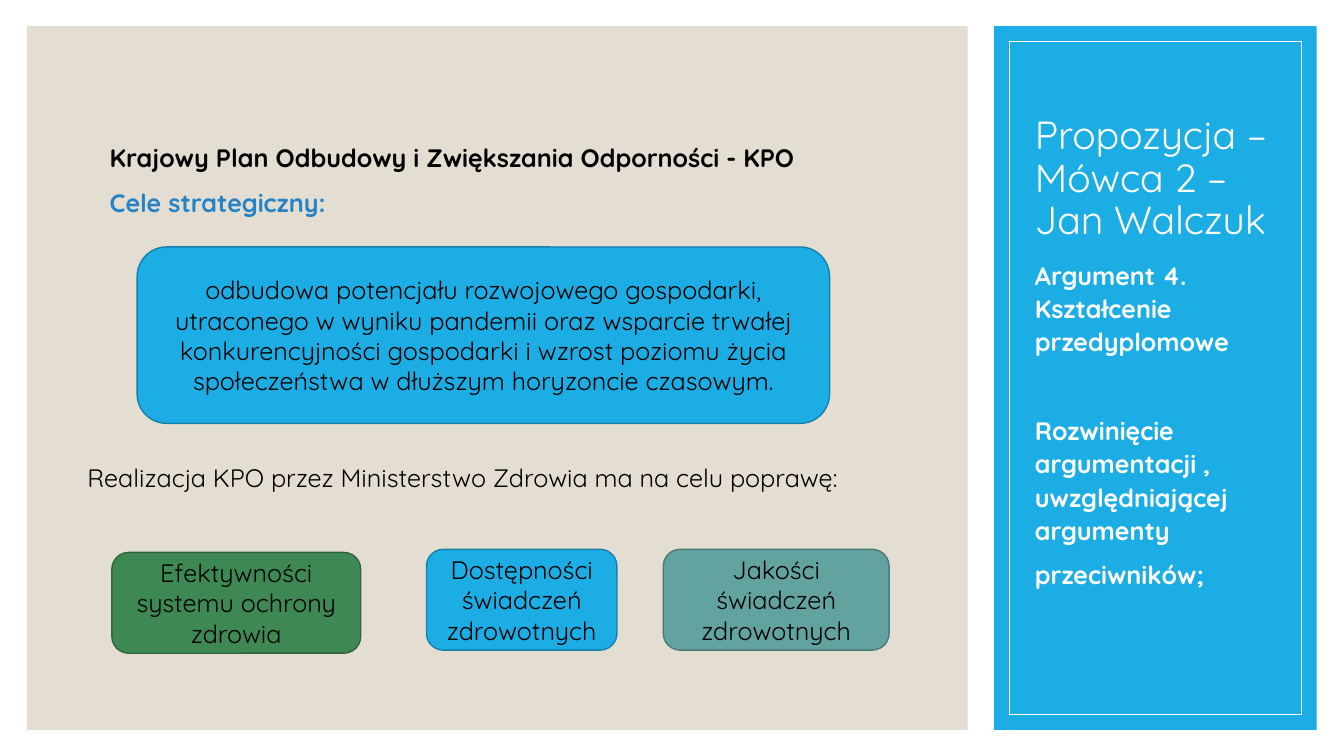
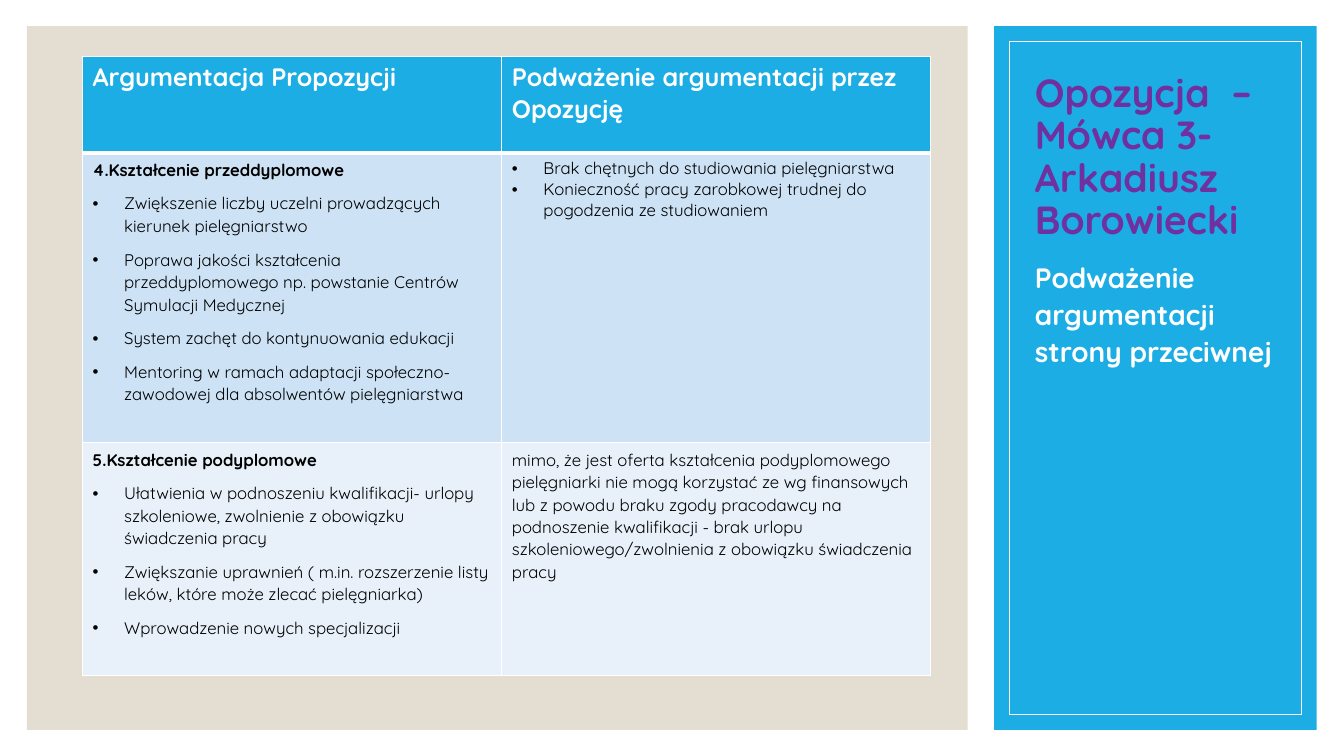
"""Builds two debate slides with a shared beige panel and blue sidebar."""
from lxml.etree import SubElement
from pptx import Presentation
from pptx.dml.color import RGBColor
from pptx.enum.shapes import MSO_SHAPE as Shape
from pptx.enum.text import MSO_ANCHOR as Anchor, PP_ALIGN as Align
from pptx.oxml.ns import qn
from pptx.util import Pt

FONT = "Quicksand"
WHITE = RGBColor(0xFF, 0xFF, 0xFF)
BLACK = RGBColor(0x00, 0x00, 0x00)
BEIGE = RGBColor(0xE3, 0xDE, 0xD1)
BLUE = RGBColor(0x1C, 0xAD, 0xE4)
DARK_BLUE = RGBColor(0x15, 0x80, 0xA9)
LINK_BLUE = RGBColor(0x26, 0x83, 0xC6)
GREEN = RGBColor(0x3E, 0x88, 0x53)
DARK_GREEN = RGBColor(0x2E, 0x65, 0x3D)
TEAL = RGBColor(0x62, 0xA3, 0x9F)
DARK_TEAL = RGBColor(0x49, 0x79, 0x76)
PURPLE = RGBColor(0x70, 0x30, 0xA0)
ROW_FILLS = [BLUE, RGBColor(0xCD, 0xE3, 0xF5), RGBColor(0xE8, 0xF1, 0xFA)]

PROPOSITION = {
    "title": "Propozycja – Mówca 2 –Jan Walczuk",
    "title_color": WHITE,
    "title_bold": False,
    "size": 18,
    "notes": [
        ("Argument 4. Kształcenie przedyplomowe", 0),
        ("Rozwinięcie argumentacji , uwzględniającej argumenty", 39.75),
        ("przeciwników;", 8),
    ],
}
OPPOSITION = {
    "title": "Opozycja  – Mówca 3-Arkadiusz Borowiecki",
    "title_color": PURPLE,
    "title_bold": True,
    "size": 20,
    "notes": [("Podważenie argumentacji strony przeciwnej", 0)],
}

PLAN_NAME = "Krajowy Plan Odbudowy i Zwiększania Odporności - KPO"
GOALS_LABEL = "Cele strategiczny:"
MINISTRY_LINE = "Realizacja KPO przez Ministerstwo Zdrowia ma na celu poprawę:"
GOAL_BOXES = [
    ("odbudowa potencjału rozwojowego gospodarki, utraconego w wyniku pandemii "
     "oraz wsparcie trwałej konkurencyjności gospodarki i wzrost poziomu życia "
     "społeczeństwa w dłuższym horyzoncie czasowym.",
     (98, 176.4, 494.6, 126), BLUE, DARK_BLUE),
    ("Efektywności systemu ochrony zdrowia",
     (79.9, 394.6, 177.8, 72), GREEN, DARK_GREEN),
    ("Dostępności świadczeń zdrowotnych",
     (304.6, 392.4, 136.1, 72), BLUE, DARK_BLUE),
    ("Jakości świadczeń zdrowotnych",
     (473.8, 392.4, 161.3, 72), TEAL, DARK_TEAL),
]

LINE_STYLES = {
    "header": {"size": 18, "color": WHITE, "bold": True},
    "heading": {"size": 12, "bold": True, "spacing": 1.07, "after": 8},
    "item": {"size": 12, "spacing": 1.07, "after": 8},
    "tight item": {"size": 12},
    "text": {"size": 12, "spacing": 1.07, "after": 8},
}
TABLE_ORIGIN = (59, 40.3)
COLUMN_WIDTHS = [299.5, 306]
ROW_HEIGHTS = [69, 207, 166.5]
TABLE_ROWS = [
    [
        [("header", "Argumentacja Propozycji")],
        [("header", "Podważenie argumentacji przez Opozycję")],
    ],
    [
        [
            ("heading", "4.Kształcenie przeddyplomowe"),
            ("item", "Zwiększenie liczby uczelni prowadzących kierunek pielęgniarstwo"),
            ("item", "Poprawa jakości kształcenia przeddyplomowego np. powstanie "
                     "Centrów Symulacji Medycznej"),
            ("item", "System zachęt do kontynuowania edukacji"),
            ("item", "Mentoring w ramach adaptacji społeczno- zawodowej dla "
                     "absolwentów pielęgniarstwa"),
        ],
        [
            ("tight item", "Brak chętnych do studiowania pielęgniarstwa"),
            ("tight item", "Konieczność pracy zarobkowej trudnej do pogodzenia "
                           "ze studiowaniem"),
        ],
    ],
    [
        [
            ("heading", "5.Kształcenie podyplomowe"),
            ("item", "Ułatwienia w podnoszeniu kwalifikacji- urlopy szkoleniowe, "
                     "zwolnienie z obowiązku świadczenia pracy"),
            ("item", "Zwiększanie uprawnień ( m.in. rozszerzenie listy leków, "
                     "które może zlecać pielęgniarka)"),
            ("item", "Wprowadzenie nowych specjalizacji"),
        ],
        [
            ("text", "mimo, że jest oferta kształcenia podyplomowego pielęgniarki "
                     "nie mogą korzystać ze wg finansowych lub z powodu braku zgody "
                     "pracodawcy na podnoszenie kwalifikacji - brak urlopu "
                     "szkoleniowego/zwolnienia z obowiązku świadczenia pracy"),
        ],
    ],
]


def points(values):
    return [Pt(value) for value in values]


def add_para(frame, text, size, color=BLACK, bold=False, spacing=1.0,
             before=0, after=0, align=Align.LEFT):
    para = frame.paragraphs[0]
    if para.runs:
        para = frame.add_paragraph()
    para.add_run().text = text
    para.alignment = align
    para.line_spacing = spacing
    para.space_before, para.space_after = Pt(before), Pt(after)
    font = para.font
    font.name, font.size, font.bold = FONT, Pt(size), bold
    font.color.rgb = color
    return para


def add_box(page, area, kind=Shape.RECTANGLE, fill=None, line=None, width=1):
    box = page.shapes.add_shape(kind, *points(area))
    box.shadow.inherit = False
    if fill is None:
        box.fill.background()
    else:
        box.fill.solid()
        box.fill.fore_color.rgb = fill
    if line is None:
        box.line.fill.background()
    else:
        box.line.color.rgb = line
        box.line.width = Pt(width)
    return box


def add_frame(page, area, anchor=Anchor.TOP):
    frame = page.shapes.add_textbox(*points(area)).text_frame
    frame.word_wrap = True
    frame.vertical_anchor = anchor
    return frame


def add_page(deck, sidebar):
    page = deck.slides.add_slide(deck.slide_layouts[6])
    add_box(page, (19.2, 18.7, 672, 502.6), fill=BEIGE)
    add_box(page, (710.2, 18.7, 230.4, 502.6), fill=BLUE)
    add_box(page, (720.9, 29.4, 209, 481), line=WHITE, width=0.5)
    title = add_frame(page, (732.2, 47.5, 191.5, 129.6), Anchor.BOTTOM)
    add_para(title, sidebar["title"], 28, sidebar["title_color"],
             sidebar["title_bold"], spacing=0.9)
    notes = add_frame(page, (732.2, 180, 191.5, 275.8))
    for text, gap in sidebar["notes"]:
        add_para(notes, text, sidebar["size"], WHITE, True, 1.1, before=gap)
    return page


def add_bullet(para):
    props = para._p.get_or_add_pPr()
    props.set("marL", str(Pt(22.5)))
    props.set("indent", str(-Pt(22.5)))
    SubElement(props, qn("a:buFont"), typeface="Arial")
    SubElement(props, qn("a:buChar"), char="•")


def add_borders(cell, widths):
    props = cell._tc.get_or_add_tcPr()
    for side, width in zip("LRTB", widths):
        line = SubElement(props, qn(f"a:ln{side}"), w=str(Pt(width)))
        fill = SubElement(line, qn("a:solidFill"))
        SubElement(fill, qn("a:srgbClr"), val=str(WHITE))


def add_arguments_table(page):
    size = (sum(COLUMN_WIDTHS), sum(ROW_HEIGHTS))
    table = page.shapes.add_table(len(ROW_HEIGHTS), len(COLUMN_WIDTHS),
                                  *points(TABLE_ORIGIN + size)).table
    for column, width in zip(table.columns, COLUMN_WIDTHS):
        column.width = Pt(width)
    for index, contents in enumerate(TABLE_ROWS):
        table.rows[index].height = Pt(ROW_HEIGHTS[index])
        top, bottom = (3 if index == 1 else 1), (3 if index == 0 else 1)
        for cell, lines in zip(table.rows[index].cells, contents):
            add_borders(cell, (1, 1, top, bottom))
            cell.fill.solid()
            cell.fill.fore_color.rgb = ROW_FILLS[index]
            for kind, text in lines:
                para = add_para(cell.text_frame, text, **LINE_STYLES[kind])
                if kind.endswith("item"):
                    add_bullet(para)


def build_plan_page(deck):
    page = add_page(deck, PROPOSITION)
    heading = add_frame(page, (71.3, 97.9, 570.2, 57.6))
    add_para(heading, PLAN_NAME, 18, bold=True)
    add_para(heading, GOALS_LABEL, 18, LINK_BLUE, True, 1.5)
    add_para(add_frame(page, (55.4, 326.4, 612, 30)), MINISTRY_LINE, 18)
    for text, area, fill, line in GOAL_BOXES:
        box = add_box(page, area, Shape.ROUNDED_RECTANGLE, fill, line)
        box.text_frame.word_wrap = True
        box.text_frame.vertical_anchor = Anchor.MIDDLE
        add_para(box.text_frame, text, 18, align=Align.CENTER)


def main():
    deck = Presentation()
    deck.slide_width, deck.slide_height = Pt(960), Pt(540)
    build_plan_page(deck)
    add_arguments_table(add_page(deck, OPPOSITION))
    deck.save("out.pptx")


if __name__ == "__main__":
    main()
